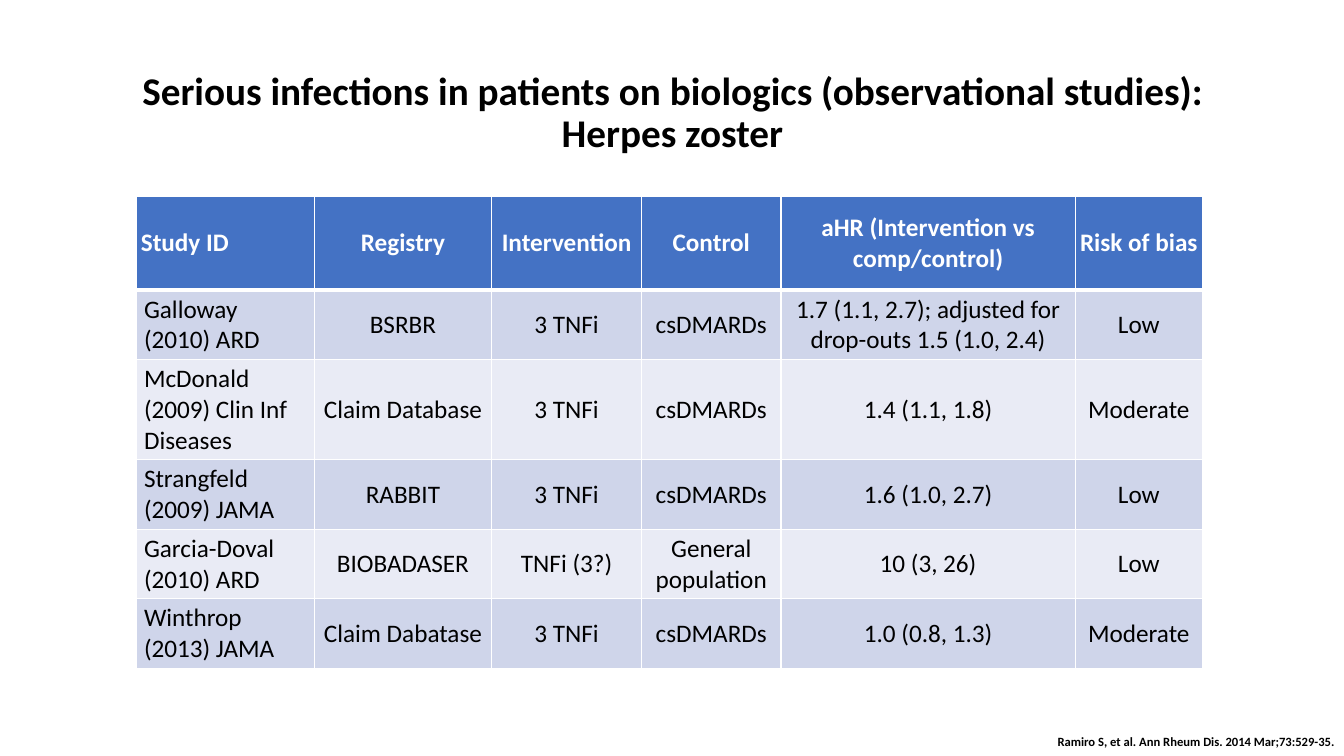
import lxml.etree
import pptx
import pptx.dml.color
import pptx.enum.text
import pptx.oxml.ns
import pptx.util

Cm = pptx.util.Cm
Pt = pptx.util.Pt
ALIGN = pptx.enum.text.PP_ALIGN
MIDDLE = pptx.enum.text.MSO_ANCHOR.MIDDLE

COLUMN_WIDTHS = [4.47, 4.47, 3.78, 3.51, 7.42, 3.2]
ROW_HEIGHTS = [2.36, 1.73, 2.46, 1.73, 1.73, 1.73]
STUDIES = [
    ["Study ID", "Registry", "Intervention", "Control",
     "aHR (Intervention vs comp/control)", "Risk of bias"],
    ["Galloway\v(2010) ARD", "BSRBR", "3 TNFi", "csDMARDs",
     "1.7 (1.1, 2.7); adjusted for drop-outs 1.5 (1.0, 2.4)", "Low"],
    ["McDonald (2009) Clin Inf Diseases", "Claim Database", "3 TNFi",
     "csDMARDs", "1.4 (1.1, 1.8)", "Moderate"],
    ["Strangfeld (2009) JAMA", "RABBIT", "3 TNFi", "csDMARDs",
     "1.6 (1.0, 2.7)", "Low"],
    ["Garcia-Doval (2010) ARD", "BIOBADASER", "TNFi (3?)",
     "General population", "10 (3, 26)", "Low"],
    ["Winthrop (2013) JAMA", "Claim Dabatase", "3 TNFi", "csDMARDs",
     "1.0 (0.8, 1.3)", "Moderate"],
]


def rgb(color):
    return pptx.dml.color.RGBColor.from_string(color)


def set_attributes(target, values):
    for name, value in values.items():
        setattr(target, name, value)


class SlideBuilder:
    font_name = "Calibri"
    text_color = "000000"
    header_text = "FFFFFF"
    header_fill = "4472C4"
    band_fills = ["E9EBF5", "CFD5EA"]
    border_color = "FFFFFF"

    def __init__(self, slide):
        self.slide = slide

    def fill_text(self, text_frame, text, size, color, bold, alignment):
        paragraph = text_frame.paragraphs[0]
        paragraph.text = text
        paragraph.alignment = alignment
        for run in paragraph.runs:
            set_attributes(run.font, {"name": self.font_name, "size": Pt(size), "bold": bold})
            run.font.color.rgb = rgb(color)
        return paragraph

    def title(self, text, left, top, width, height):
        shape = self.slide.shapes.title
        set_attributes(shape, {"left": Cm(left), "top": Cm(top),
                               "width": Cm(width), "height": Cm(height)})
        set_attributes(shape.text_frame, {
            "word_wrap": True, "vertical_anchor": MIDDLE,
            "auto_size": pptx.enum.text.MSO_AUTO_SIZE.NONE})
        paragraph = self.fill_text(shape.text_frame, text, 28, self.text_color, True,
                                   ALIGN.CENTER)
        paragraph.line_spacing = 0.9

    def citation(self, text, left, top, width, height):
        shape = self.slide.shapes.add_textbox(Cm(left), Cm(top), Cm(width), Cm(height))
        shape.text_frame.word_wrap = True
        self.fill_text(shape.text_frame, text, 9, self.text_color, True, ALIGN.RIGHT)

    def border(self, cell, side, width):
        line = lxml.etree.SubElement(cell._tc.get_or_add_tcPr(),
                                     pptx.oxml.ns.qn(f"a:ln{side}"), w=str(Pt(width)))
        fill = lxml.etree.SubElement(line, pptx.oxml.ns.qn("a:solidFill"))
        lxml.etree.SubElement(fill, pptx.oxml.ns.qn("a:srgbClr"), val=self.border_color)

    def cell(self, cell, text, row, column):
        header = row == 0
        side_margin, end_margin = (0.1, 0.05) if header else (0.18, 0.1)
        set_attributes(cell, {
            "margin_left": Cm(side_margin), "margin_right": Cm(side_margin),
            "margin_top": Cm(end_margin), "margin_bottom": Cm(end_margin),
            "vertical_anchor": MIDDLE})
        widths = {"L": 1, "R": 1, "T": 3 if row == 1 else 1, "B": 3 if header else 1}
        for side, width in widths.items():
            self.border(cell, side, width)
        cell.fill.solid()
        cell.fill.fore_color.rgb = rgb(self.header_fill if header else self.band_fills[row % 2])
        self.fill_text(cell.text_frame, text, 18,
                       self.header_text if header else self.text_color, header,
                       ALIGN.CENTER if column else ALIGN.LEFT)

    def table(self, rows, left, top, column_widths, row_heights):
        table = self.slide.shapes.add_table(
            len(rows), len(column_widths), Cm(left), Cm(top),
            Cm(sum(column_widths)), Cm(sum(row_heights))).table
        for column, width in zip(table.columns, column_widths):
            column.width = Cm(width)
        for row, height in zip(table.rows, row_heights):
            row.height = Cm(height)
        for row, texts in enumerate(rows):
            for column, text in enumerate(texts):
                self.cell(table.cell(row, column), text, row, column)


def main():
    presentation = pptx.Presentation()
    set_attributes(presentation, {"slide_width": Cm(33.87), "slide_height": Cm(19.05)})
    title_only = presentation.slide_layouts.get_by_name("Title Only")
    builder = SlideBuilder(presentation.slides.add_slide(title_only))
    builder.title("Serious infections in patients on biologics (observational studies): "
                  "Herpes zoster", 2.34, 1.02, 29.21, 3.68)
    builder.table(STUDIES, 3.45, 4.95, COLUMN_WIDTHS, ROW_HEIGHTS)
    builder.citation("Ramiro S, et al. Ann Rheum Dis. 2014 Mar;73:529-35.",
                     21.18, 18.36, 12.7, 0.64)
    presentation.save("out.pptx")


if __name__ == "__main__":
    main()
